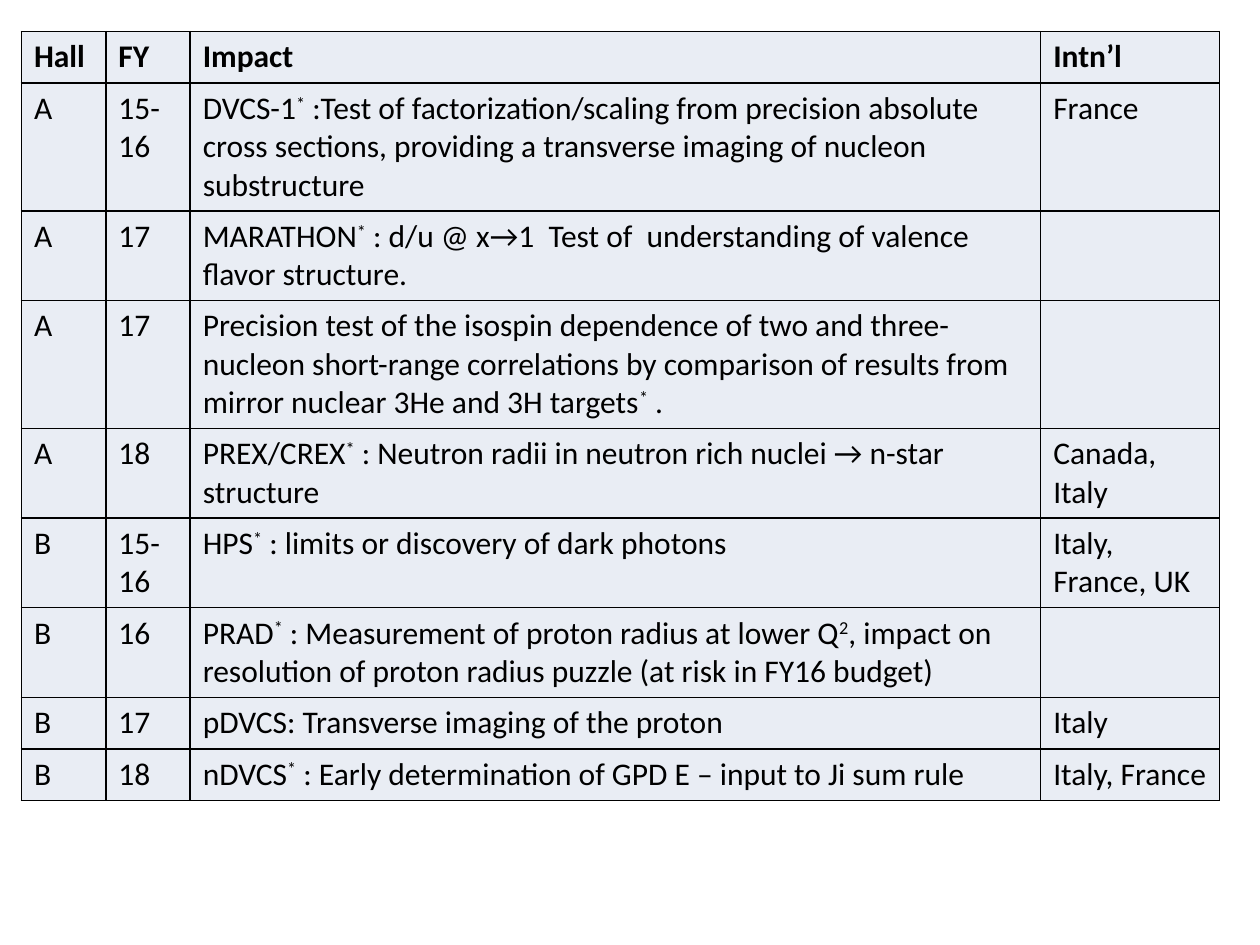
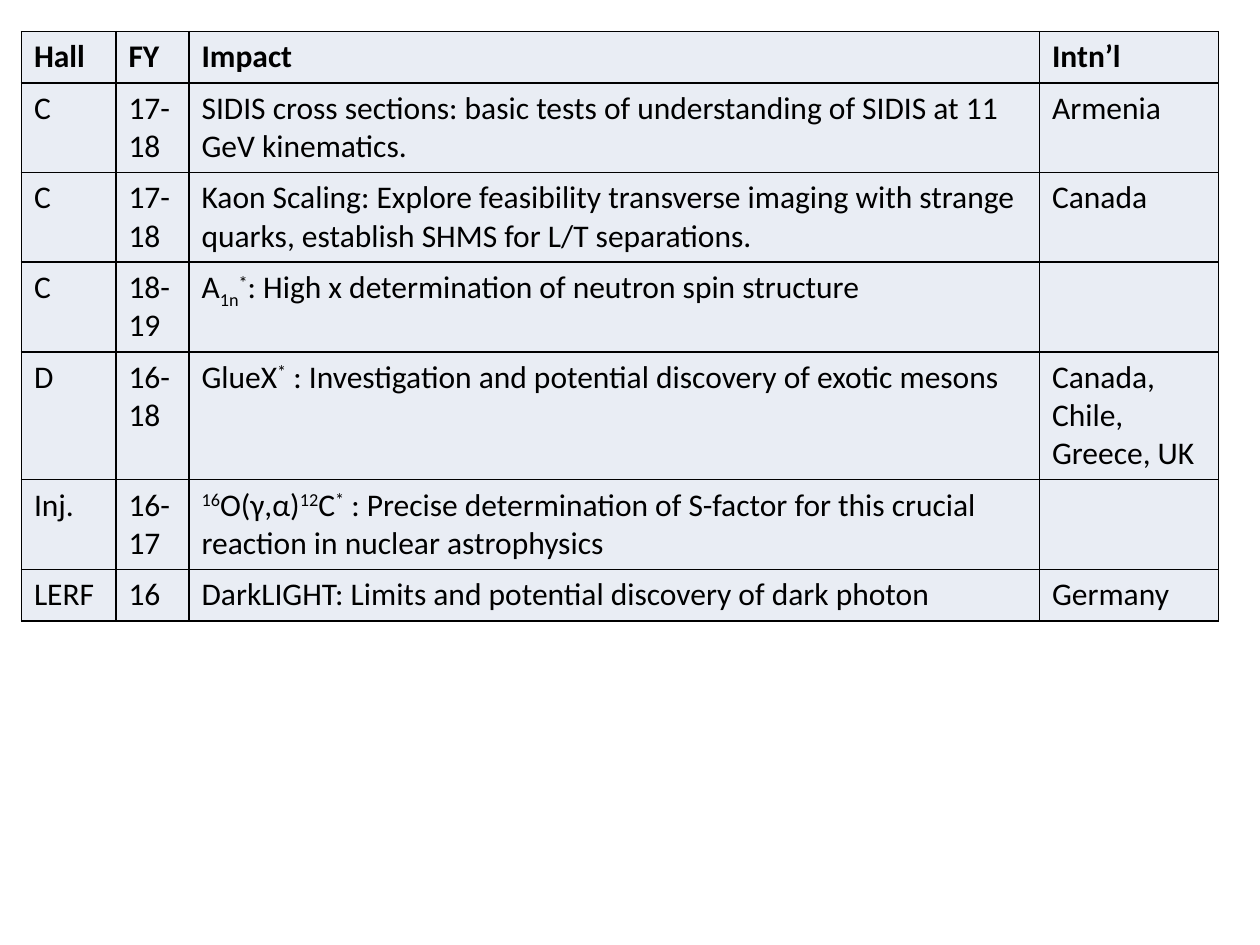
from dataclasses import dataclass

from lxml.etree import SubElement
from pptx import Presentation
from pptx.dml.color import RGBColor
from pptx.oxml.ns import qn
from pptx.util import Inches, Pt

BLACK = RGBColor(0x00, 0x00, 0x00)
PALE_BLUE = RGBColor(0xE9, 0xED, 0xF4)
FONT_NAME = "Calibri"
FONT_SIZE = Pt(18)
BORDER_WIDTH = Pt(1)
TABLE_LEFT, TABLE_TOP = Inches(0.17), Inches(0.25)
ROW_HEIGHT = Inches(0.41)
IMPACT_WIDTH, INTERNATIONAL_WIDTH = Inches(6.75), Inches(1.42)
HEADER = ("Hall", "FY", "Impact", "Intn’l")

# A "|" separates runs; a leading "^" raises a run and "_" lowers it
BASELINES = {"^": "30000", "_": "-25000"}


@dataclass(frozen=True)
class ImpactTable:
    hall_width: int
    year_width: int
    height: int
    rows: tuple[tuple[str, str, str, str], ...]


HALLS_A_AND_B = ImpactTable(Inches(0.67), Inches(0.67), Inches(6.02), (
    ("A", "15-16", "DVCS-1|^*| :Test of factorization/scaling from precision absolute "
     "cross sections, providing a transverse imaging of nucleon substructure", "France"),
    ("A", "17", "MARATHON|^*| : d/u @ x→1  Test of  understanding of valence "
     "flavor structure.", ""),
    ("A", "17", "Precision test of the isospin dependence of two and three-nucleon "
     "short-range correlations by comparison of results from mirror nuclear "
     "3He and 3H targets|^*| .", ""),
    ("A", "18", "PREX/CREX|^*| : Neutron radii in neutron rich nuclei → n-star structure",
     "Canada, Italy"),
    ("B", "15-16", "HPS|^*| : limits or discovery of dark photons", "Italy, France, UK"),
    ("B", "16", "PRAD|^*| : Measurement of proton radius at lower Q|^2|, impact on "
     "resolution of proton radius puzzle (at risk in FY16 budget)", ""),
    ("B", "17", "pDVCS: Transverse imaging of the proton", "Italy"),
    ("B", "18", "nDVCS|^*| : Early determination of GPD E – input to Ji sum rule",
     "Italy, France"),
))

OTHER_HALLS = ImpactTable(Inches(0.75), Inches(0.58), Inches(4.61), (
    ("C", "17-18", "SIDIS cross sections: basic tests of understanding of SIDIS at "
     "11 GeV kinematics.", "Armenia"),
    ("C", "17-18", "Kaon Scaling: Explore feasibility transverse imaging with strange "
     "quarks, establish SHMS for L/T separations.", "Canada"),
    ("C", "18-19", "A|_1n|^*|: High x determination of neutron spin structure", ""),
    ("D", "16-18", "GlueX|^*| : Investigation and potential discovery of exotic mesons",
     "Canada, Chile, Greece, UK"),
    ("Inj.", "16-17", "^16|O(γ,α)|^12|C|^*| : Precise determination of S-factor for this "
     "crucial reaction in nuclear astrophysics", ""),
    ("LERF", "16", "DarkLIGHT: Limits and potential discovery of dark photon", "Germany"),
))


def add_borders(cell) -> None:
    properties = cell._tc.get_or_add_tcPr()
    for side in ("a:lnL", "a:lnR", "a:lnT", "a:lnB"):
        line = SubElement(properties, qn(side), w=str(int(BORDER_WIDTH)))
        fill = SubElement(line, qn("a:solidFill"))
        SubElement(fill, qn("a:srgbClr"), val=str(BLACK))


def write_runs(paragraph, marked_text: str, bold: bool) -> None:
    for part in filter(None, marked_text.split("|")):
        baseline = BASELINES.get(part[0])
        run = paragraph.add_run()
        run.text = part[1:] if baseline else part
        run.font.name = FONT_NAME
        run.font.size = FONT_SIZE
        run.font.bold = bold
        run.font.color.rgb = BLACK
        if baseline:
            run.font._element.set("baseline", baseline)


def add_impact_slide(presentation, content: ImpactTable) -> None:
    slide = presentation.slides.add_slide(presentation.slide_layouts[6])
    rows = (HEADER, *content.rows)
    widths = (content.hall_width, content.year_width, IMPACT_WIDTH, INTERNATIONAL_WIDTH)
    frame = slide.shapes.add_table(
        len(rows), len(widths), TABLE_LEFT, TABLE_TOP, sum(widths), content.height)
    table = frame.table
    table.horz_banding = False
    table.first_row = False
    for column, width in zip(table.columns, widths):
        column.width = width

    # Rows start at one line and grow with their text
    for row_index, (row, texts) in enumerate(zip(table.rows, rows)):
        row.height = ROW_HEIGHT
        for cell, text in zip(row.cells, texts):
            add_borders(cell)
            cell.fill.solid()
            cell.fill.fore_color.rgb = PALE_BLUE
            write_runs(cell.text_frame.paragraphs[0], text, bold=row_index == 0)
    frame.height = content.height


def main() -> None:
    presentation = Presentation()
    presentation.slide_width = Inches(10)
    presentation.slide_height = Inches(7.5)
    for content in (HALLS_A_AND_B, OTHER_HALLS):
        add_impact_slide(presentation, content)
    presentation.save("out.pptx")


if __name__ == "__main__":
    main()
